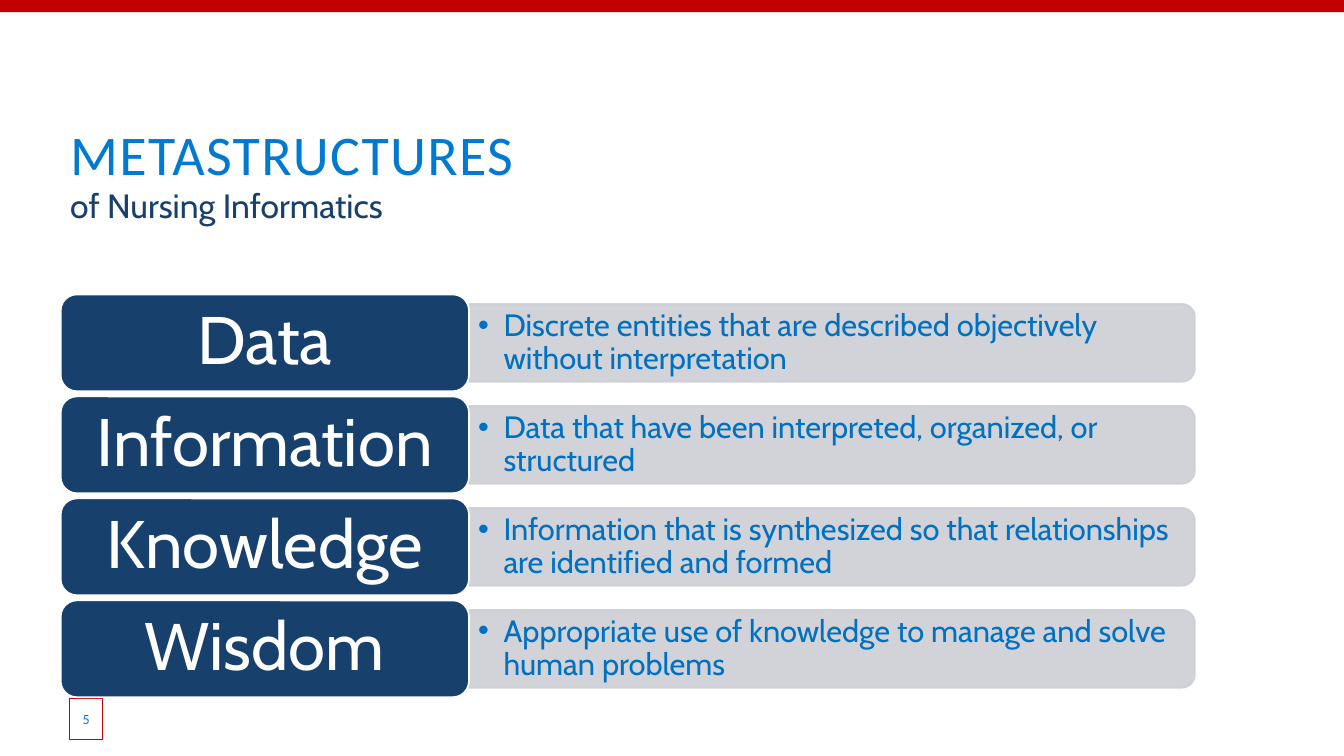
from lxml.etree import SubElement
from pptx import Presentation
from pptx.dml.color import RGBColor
from pptx.enum.shapes import MSO_SHAPE
from pptx.enum.text import MSO_ANCHOR, MSO_AUTO_SIZE, PP_ALIGN
from pptx.oxml.ns import qn
from pptx.util import Cm, Pt

RED, WHITE, GREY = "C00000", "FFFFFF", "CCCFD4"
NAVY, BLUE, TEXT_BLUE = "17406D", "0079D0", "0070C0"
ROWS = [
    ("Data", "Discrete entities that are described objectively without interpretation"),
    ("Information", "Data that have been interpreted, organized, or structured"),
    ("Knowledge", "Information that is synthesized so that relationships are identified and formed"),
    ("Wisdom", "Appropriate use of knowledge to manage and solve human problems"),
]


def rgb(value):
    return RGBColor.from_string(value)


def set_attrs(obj, values):
    for name, value in values.items():
        setattr(obj, name, value)


def place(sp, x, y, w, h):
    set_attrs(sp, {"left": Cm(x), "top": Cm(y), "width": Cm(w), "height": Cm(h)})


def set_alpha(fill_parent, percent):
    for clr in fill_parent.iter(qn("a:srgbClr")):
        SubElement(clr, qn("a:alpha"), val=str(percent * 1000))


def add_box(s, kind, box, fill, line=None, line_width=1.25):
    sp = s.shapes.add_shape(kind, *map(Cm, box))
    sp.shadow.inherit = False
    sp.fill.solid()
    sp.fill.fore_color.rgb = rgb(fill)
    if line:
        sp.line.color.rgb = rgb(line)
        sp.line.width = Pt(line_width)
    else:
        sp.line.fill.background()
    return sp


def write(sp, text, size, font, color, insets, anchor=MSO_ANCHOR.MIDDLE,
          align=PP_ALIGN.LEFT, spacing=1.0):
    tf = sp.text_frame
    set_attrs(tf, {"word_wrap": True, "auto_size": MSO_AUTO_SIZE.NONE,
                   "vertical_anchor": anchor})
    sides = ("margin_left", "margin_top", "margin_right", "margin_bottom")
    set_attrs(tf, dict(zip(sides, map(Cm, insets))))
    p = tf.paragraphs[0]
    set_attrs(p, {"alignment": align, "line_spacing": spacing, "space_before": Pt(0)})
    r = p.add_run()
    r.text = text
    set_attrs(r.font, {"size": Pt(size), "name": font, "bold": False})
    r.font.color.rgb = rgb(color)
    return p, r


def add_bullet(p, indent):
    pPr = p._p.get_or_add_pPr()
    pPr.set("marL", str(Cm(indent)))
    pPr.set("indent", str(-Cm(indent)))
    SubElement(pPr, qn("a:buFont"), typeface="Arial")
    SubElement(pPr, qn("a:buChar"), char="•")


def add_heading(s, x, y, w):
    title, body = s.shapes.title, s.placeholders[1]
    place(title, x, y, w, 1.96)
    p, r = write(title, "METASTRUCTURES", 40, "Calibri", BLUE,
                 (0.25, 0.13, 0.25, 0), MSO_ANCHOR.BOTTOM)
    r.font._element.set("spc", "100")
    place(body, x, y + 1.9, w, 1.17)
    p, r = write(body, "of Nursing Informatics", 24, "Cabin", NAVY,
                 (0.25, 0.13, 0.25, 0.13), MSO_ANCHOR.TOP, spacing=0.9)
    pPr = p._p.get_or_add_pPr()
    pPr.set("marL", "0")
    pPr.set("indent", "0")
    SubElement(pPr, qn("a:buNone"))


def add_row(s, x, y, h, label, description):
    label_w, bar_w, bar_h = 10.29, 18.29, 1.96
    bar_x, mid = x + label_w, y + h / 2
    bar = add_box(s, MSO_SHAPE.ROUND_2_SAME_RECTANGLE,
                  (bar_x + (bar_w - bar_h) / 2, mid - bar_w / 2, bar_h, bar_w),
                  GREY, GREY)
    bar.rotation = 90
    set_alpha(bar._element.spPr, 90)
    tb = s.shapes.add_textbox(*map(Cm, (bar_x, mid - 0.89, bar_w - 0.1, 1.78)))
    p, r = write(tb, description, 22, "Cabin", TEXT_BLUE,
                 (0.23, 0.13, 0.23, 0.13), spacing=0.9)
    p.level = 1
    add_bullet(p, 0.64)
    tag = add_box(s, MSO_SHAPE.ROUNDED_RECTANGLE, (x, y, label_w, h), NAVY, WHITE)
    write(tag, label, 48, "Cabin", WHITE, (0.5, 0.25, 0.5, 0.25),
          align=PP_ALIGN.CENTER, spacing=0.9)


def add_rows(s, x, y, row_h, pitch):
    for i, (label, description) in enumerate(ROWS):
        add_row(s, x, y + i * pitch, row_h, label, description)


def add_page_number(s, x, y, w, h):
    sp = add_box(s, MSO_SHAPE.RECTANGLE, (x, y, w, h), WHITE, RED, 0.75)
    set_alpha(sp._element.spPr.find(qn("a:solidFill")), 82)
    write(sp, "5", 10, "Calibri", BLUE, (0, 0.13, 0, 0.13), align=PP_ALIGN.CENTER)


def main():
    prs = Presentation()
    set_attrs(prs, {"slide_width": Cm(33.87), "slide_height": Cm(19.05)})
    s = prs.slides.add_slide(prs.slide_layouts[1])
    add_box(s, MSO_SHAPE.RECTANGLE, (0, 0, 33.87, 0.31), RED)
    add_heading(s, 1.52, 2.74, 30.05)
    add_page_number(s, 1.75, 17.6, 0.84, 1.03)
    add_rows(s, 1.53, 7.42, 2.44, 2.57)
    prs.save("out.pptx")


if __name__ == "__main__":
    main()
